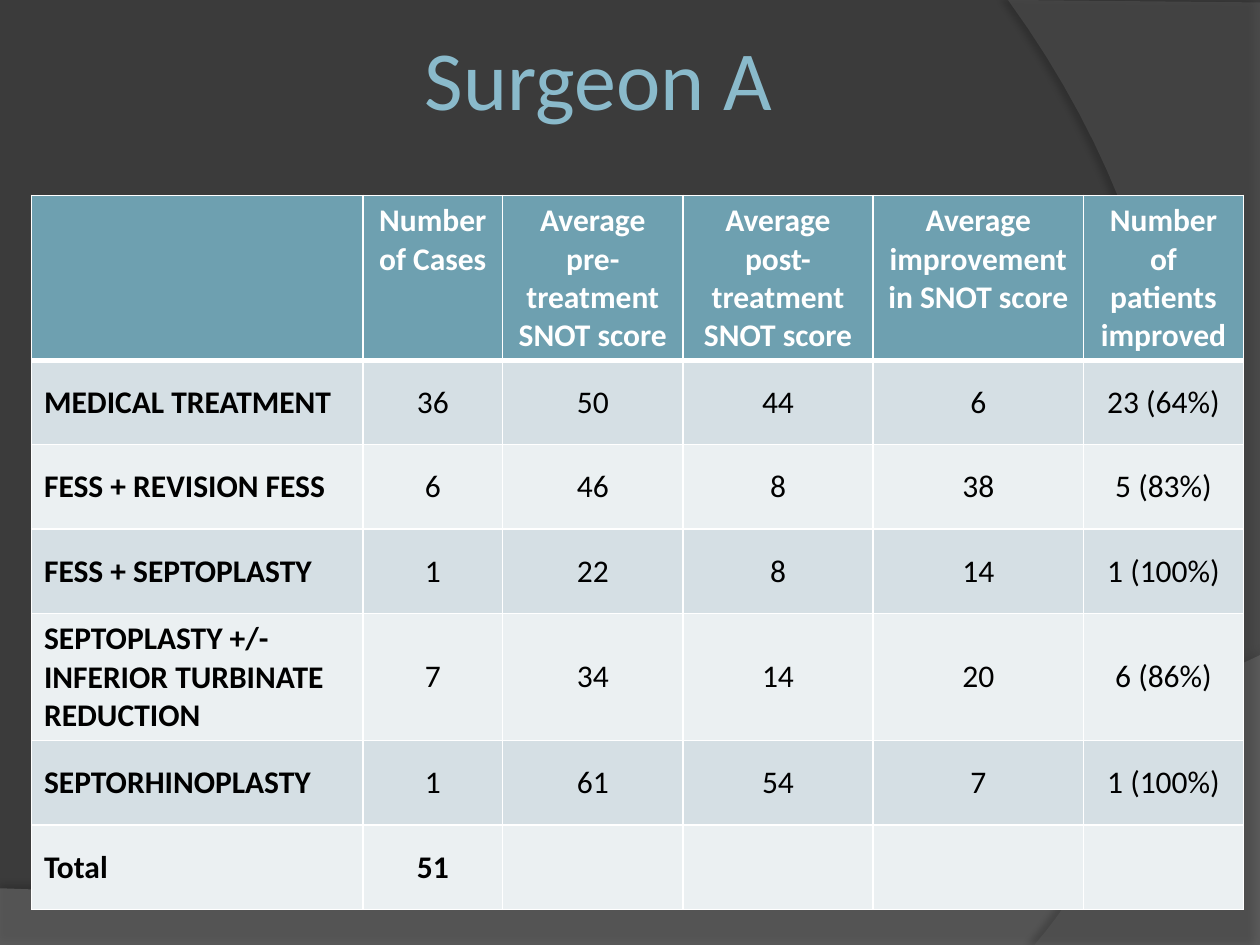
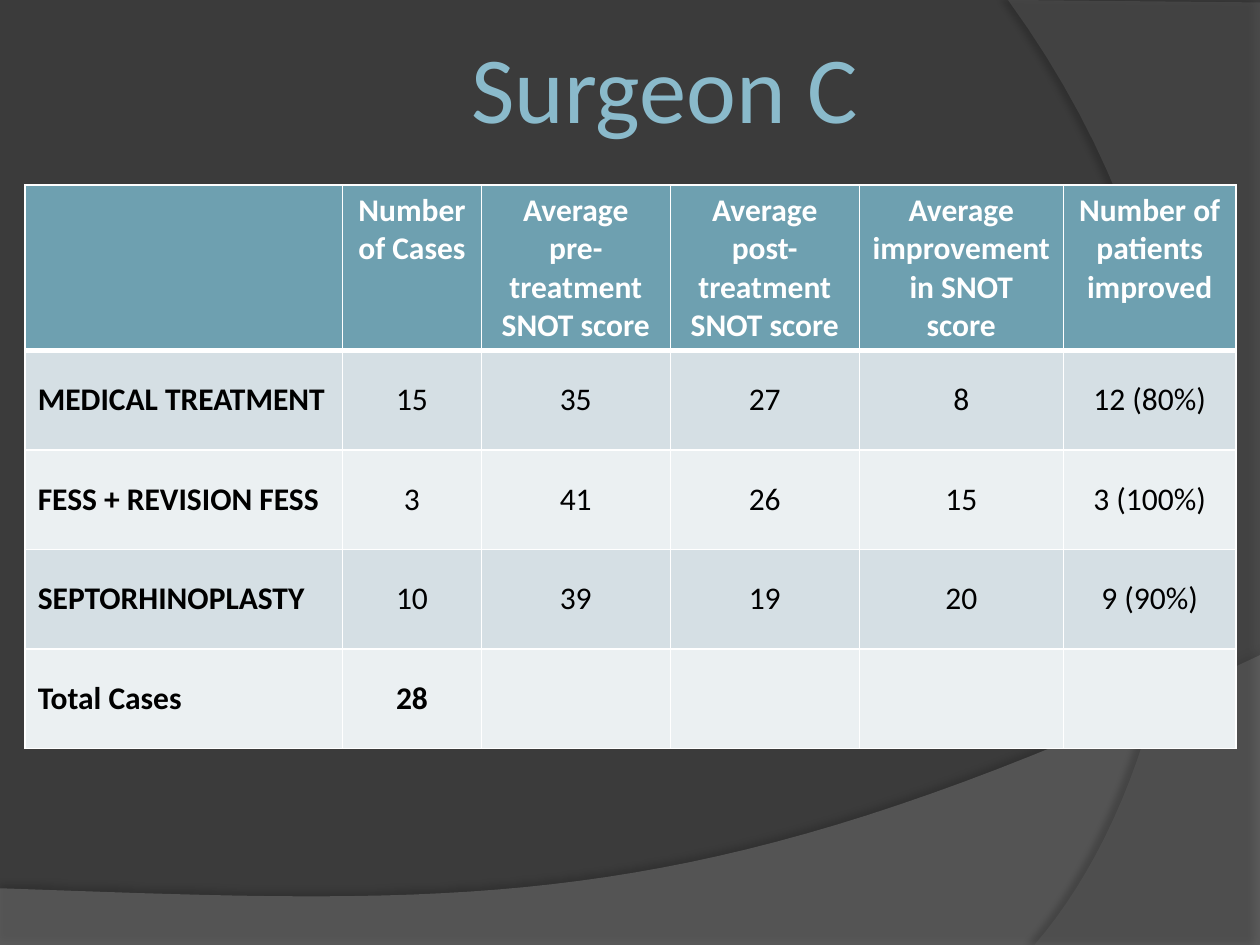
import pptx
import pptx.dml.color
import pptx.enum.text
import pptx.oxml
import pptx.oxml.ns
import pptx.util
from lxml import etree

Inches = pptx.util.Inches
Pt = pptx.util.Pt
qn = pptx.oxml.ns.qn
ALIGN = pptx.enum.text.PP_ALIGN
ANCHOR = pptx.enum.text.MSO_ANCHOR

# Content
HEADINGS = [
    "",
    "Number of Cases",
    "Average\npre-treatment SNOT score",
    "Average\npost-treatment SNOT score",
    "Average improvement\nin SNOT score",
    "Number of patients improved",
]
SURGEONS = [
    {
        "title": "Surgeon A", "title_size": 48, "title_box": (2.24, 0.28, 4.49, 0.66),
        "table_corner": (0.25, 1.55),
        "columns": [2.63, 1.11, 1.43, 1.51, 1.67, 1.27],
        "row_height": 0.67, "tall_rows": {4: 1.01},
        "results": [
            ("MEDICAL TREATMENT", "36", "50", "44", "6", "23 (64%)"),
            ("FESS + REVISION FESS", "6", "46", "8", "38", "5 (83%)"),
            ("FESS + SEPTOPLASTY", "1", "22", "8", "14", "1 (100%)"),
            ("SEPTOPLASTY +/- INFERIOR TURBINATE REDUCTION", "7", "34", "14", "20", "6 (86%)"),
            ("SEPTORHINOPLASTY", "1", "61", "54", "7", "1 (100%)"),
            ("Total", "51", "", "", "", ""),
        ],
    },
    {
        "title": "Surgeon C", "title_size": 54, "title_box": (0.51, 0.13, 9, 1.1),
        "table_corner": (0.2, 1.47),
        "columns": [2.52, 1.1, 1.5, 1.5, 1.62, 1.37],
        "row_height": 0.79, "tall_rows": {},
        "results": [
            ("MEDICAL TREATMENT", "15", "35", "27", "8", "12 (80%)"),
            ("FESS + REVISION FESS", "3", "41", "26", "15", "3 (100%)"),
            ("SEPTORHINOPLASTY", "10", "39", "19", "20", "9 (90%)"),
            ("Total Cases", "28", "", "", "", ""),
        ],
    },
]

# Shared look
FONT = "Calibri"
COLORS = {
    "background": "3B3B3B", "lower_swoosh": "7F7F7F", "right_swoosh": "5E5E5E",
    "shadow": "000000", "title": "8ABACB", "heading": "FFFFFF", "text": "000000",
    "heading_fill": "6EA0B0", "odd_row": "D5DFE4", "even_row": "EBF0F2", "border": "FFFFFF",
}
HEADING_HEIGHT = 1.31
# Each outline is a start point, then line ends (2 numbers) or Bezier curves (6 numbers)
SWOOSHES = [
    {"color": "lower_swoosh", "opacity": 45, "start": (0, 7.05),
     "steps": [(0, 7.5), (10, 7.5), (10, 5.2), (5.59, 7.29, 3.91, 7.19, 0, 7.05)],
     "shadow": {"opacity": 35, "blur": 4, "distance": 3.5, "angle": 270}},
    {"color": "right_swoosh", "opacity": 40, "start": (10, 0.02),
     "steps": [(10, 7.5), (8.21, 7.5), (9.35, 6.19, 10.18, 3, 8, 0)],
     "shadow": {"opacity": 45, "blur": 4, "distance": 4, "angle": 180}},
]


def rgb(name):
    return pptx.dml.color.RGBColor.from_string(COLORS[name])


def write(frame, text, size=18, color="text", bold=False, align=ALIGN.CENTER, indent=0):
    for number, line in enumerate(text.split("\n")):
        paragraph = frame.paragraphs[0] if number == 0 else frame.add_paragraph()
        paragraph.alignment = align
        if indent:
            properties = paragraph._p.get_or_add_pPr()
            properties.set("marL", str(Inches(indent)))
            properties.set("indent", "0")
        paragraph.font.size = Pt(size)
        if line:
            run = paragraph.add_run()
            run.text = line
            run.font.name, run.font.size, run.font.bold = FONT, Pt(size), bold
            run.font.color.rgb = rgb(color)


def add_color(parent, name, opacity=100):
    color = etree.SubElement(parent, qn("a:srgbClr"), val=COLORS[name])
    etree.SubElement(color, qn("a:alpha"), val=str(opacity * 1000))


def outline_points(start, steps, pieces=40):
    points = [start]
    for step in steps:
        if len(step) == 2:
            points.append(step)
            continue
        corners = [points[-1], step[:2], step[2:4], step[4:]]
        for piece in range(1, pieces + 1):
            t = piece / pieces
            weights = ((1 - t) ** 3, 3 * t * (1 - t) ** 2, 3 * t * t * (1 - t), t ** 3)
            points.append(tuple(sum(w * c[axis] for w, c in zip(weights, corners))
                                for axis in (0, 1)))
    return points


def add_swoosh(slide, swoosh):
    points = [(Inches(x), Inches(y)) for x, y in outline_points(swoosh["start"], swoosh["steps"])]
    builder = slide.shapes.build_freeform(*points[0])
    builder.add_line_segments(points[1:], close=True)
    shape = builder.convert_to_shape()
    shape.line.fill.background()
    shape.fill.solid()
    shape.fill.fore_color.rgb = rgb(swoosh["color"])
    fill = shape._element.spPr.find(qn("a:solidFill"))
    fill.clear()
    add_color(fill, swoosh["color"], swoosh["opacity"])
    shape.shadow.inherit = False
    shadow = swoosh["shadow"]
    effect = etree.SubElement(
        shape._element.spPr.find(qn("a:effectLst")), qn("a:outerShdw"),
        blurRad=str(Pt(shadow["blur"])), dist=str(Pt(shadow["distance"])),
        dir=str(shadow["angle"] * 60000), algn="ctr", rotWithShape="0")
    add_color(effect, "shadow", shadow["opacity"])


def add_title(slide, surgeon):
    frame = slide.shapes.add_textbox(*map(Inches, surgeon["title_box"])).text_frame
    frame.word_wrap = True
    frame.vertical_anchor = ANCHOR.MIDDLE
    frame.margin_left = frame.margin_right = Inches(0.05)
    write(frame, surgeon["title"], size=surgeon["title_size"], color="title", indent=0.53)


def set_borders(cell, top, bottom):
    properties = cell._tc.get_or_add_tcPr()
    for place, (side, width) in enumerate([("L", 1), ("R", 1), ("T", top), ("B", bottom)]):
        border = pptx.oxml.parse_xml(
            f'<a:ln{side} {pptx.oxml.ns.nsdecls("a")} w="{Pt(width)}"><a:solidFill/></a:ln{side}>')
        add_color(border[0], "border")
        properties.insert(place, border)


def add_results(slide, surgeon):
    rows = [HEADINGS] + surgeon["results"]
    heights = [HEADING_HEIGHT] + [surgeon["tall_rows"].get(row, surgeon["row_height"])
                                  for row in range(1, len(rows))]
    left, top = surgeon["table_corner"]
    size = (sum(surgeon["columns"]), sum(heights))
    table = slide.shapes.add_table(len(rows), len(HEADINGS),
                                   *map(Inches, (left, top, *size))).table
    table.horz_banding = False
    for column, width in zip(table.columns, surgeon["columns"]):
        column.width = Inches(width)
    for row, (values, height) in enumerate(zip(rows, heights)):
        table.rows[row].height = Inches(height)
        heading, total = row == 0, row == len(rows) - 1
        fill = "heading_fill" if heading else "odd_row" if row % 2 else "even_row"
        for column, value in enumerate(values):
            cell = table.cell(row, column)
            cell.fill.solid()
            cell.fill.fore_color.rgb = rgb(fill)
            cell.vertical_anchor = ANCHOR.TOP if heading else ANCHOR.MIDDLE
            set_borders(cell, top=3 if row == 1 else 1, bottom=3 if heading else 1)
            write(cell.text_frame, value, color="heading" if heading else "text",
                  bold=heading or total or column == 0,
                  align=ALIGN.LEFT if column == 0 else ALIGN.CENTER)


def main():
    deck = pptx.Presentation()
    deck.slide_width, deck.slide_height = Inches(10), Inches(7.5)
    for surgeon in SURGEONS:
        slide = deck.slides.add_slide(deck.slide_layouts[6])
        slide.background.fill.solid()
        slide.background.fill.fore_color.rgb = rgb("background")
        for swoosh in SWOOSHES:
            add_swoosh(slide, swoosh)
        add_title(slide, surgeon)
        add_results(slide, surgeon)
    deck.save("out.pptx")


if __name__ == "__main__":
    main()
